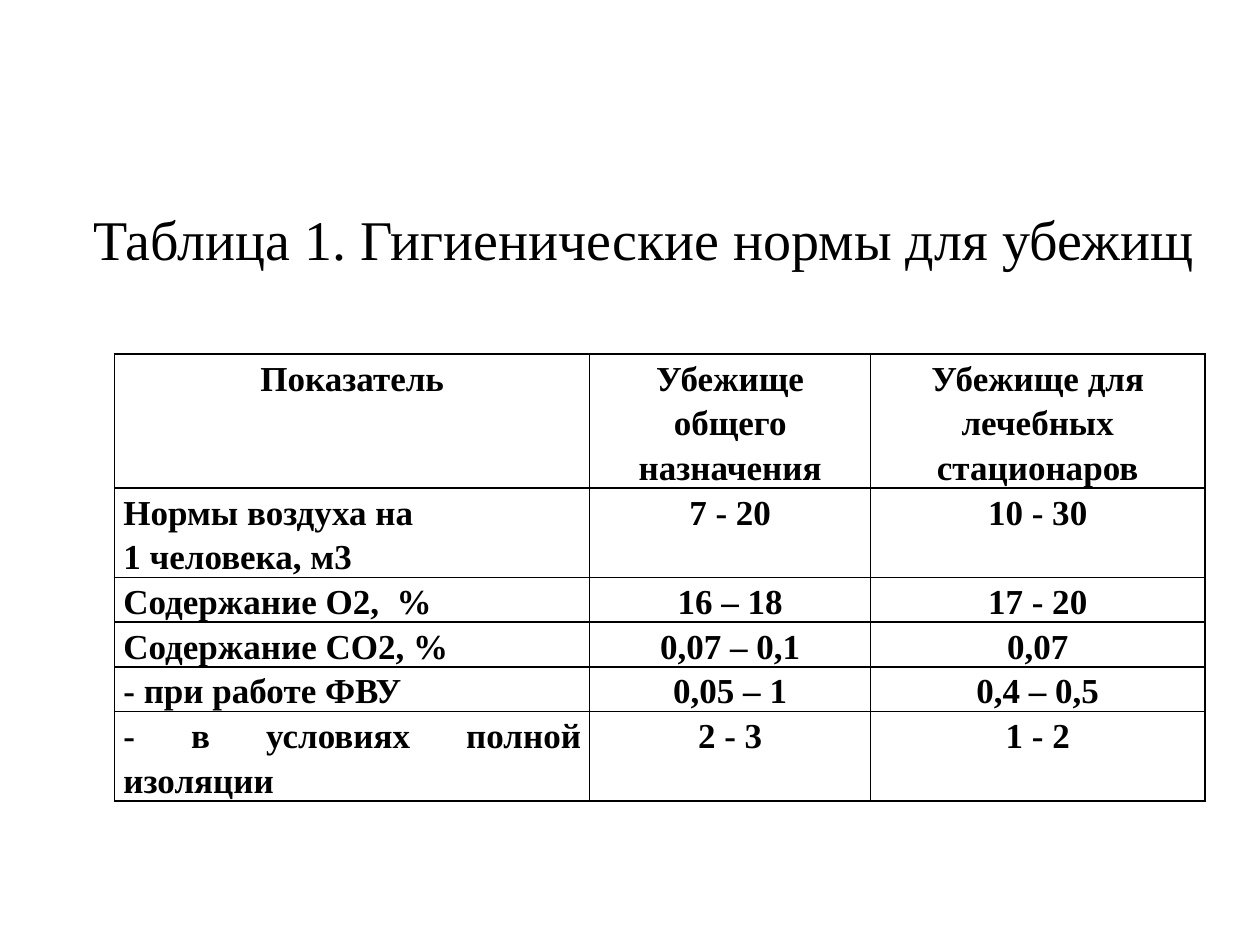
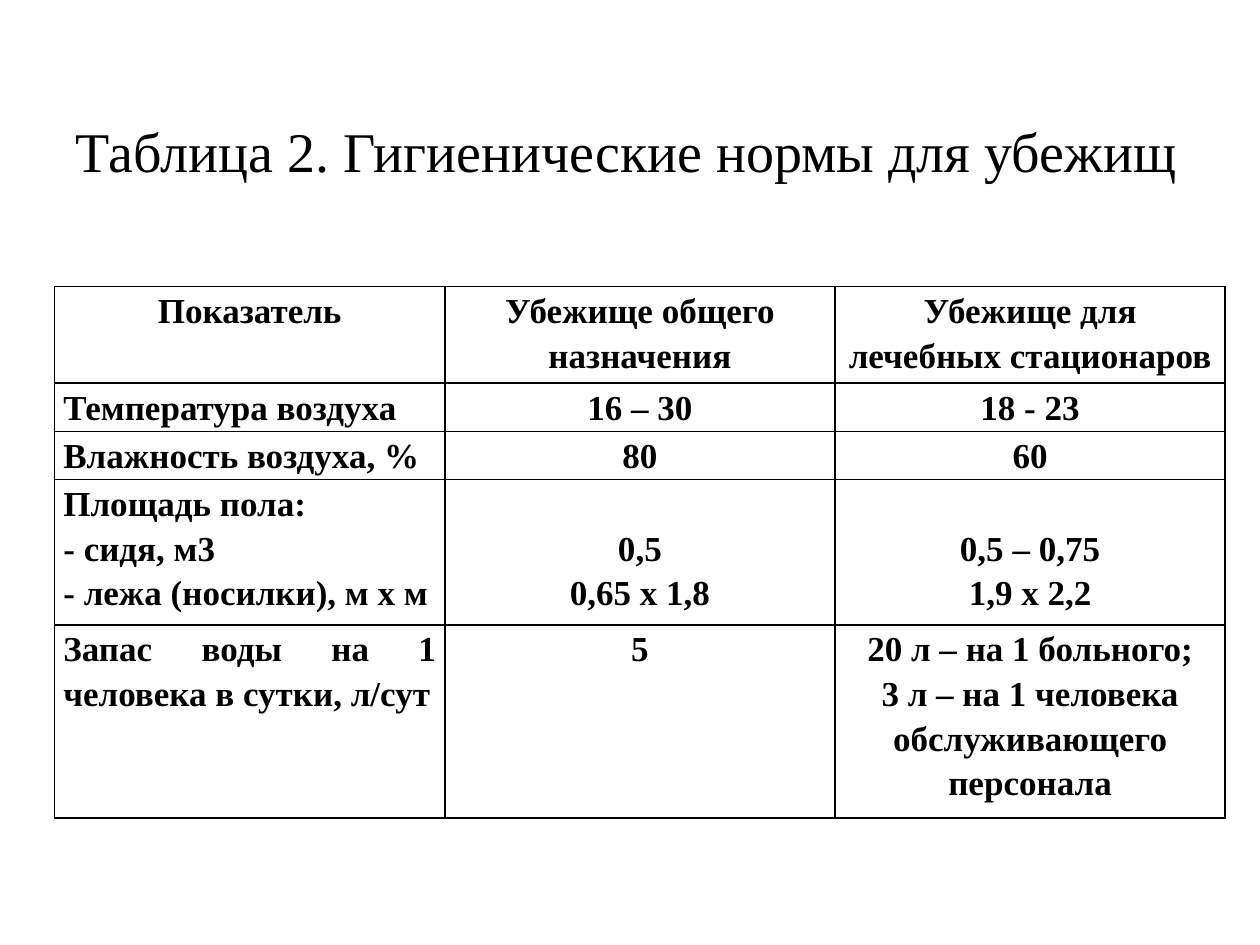
from lxml.etree import SubElement
from pptx import Presentation
from pptx.dml.color import RGBColor
from pptx.enum.text import MSO_ANCHOR, MSO_AUTO_SIZE, PP_ALIGN
from pptx.oxml.ns import qn
from pptx.util import Pt

BLACK = RGBColor(0, 0, 0)
WHITE = RGBColor(255, 255, 255)
TITLE_ONLY = 5
LINE = 25.5  # height of one table line, in points

TITLE_FONT = {"name": "Times New Roman", "size": Pt(32), "bold": False}
CELL_FONT = {"name": "Times New Roman", "size": Pt(20), "bold": True}
TITLE_FRAME = {"auto_size": MSO_AUTO_SIZE.NONE, "word_wrap": True,
               "vertical_anchor": MSO_ANCHOR.MIDDLE}
CELL_FORMAT = {"margin_left": Pt(5), "margin_right": Pt(5), "margin_top": 0,
               "margin_bottom": 0, "vertical_anchor": MSO_ANCHOR.TOP}
PLAIN_TABLE = {"first_row": False, "horz_banding": False}

HEADINGS = ("Показатель", "Убежище общего назначения",
            "Убежище для лечебных стационаров")
AIR_NORMS = (
    HEADINGS,
    ("Нормы воздуха на\n1 человека, м3", "7 - 20", "10 - 30"),
    ("Содержание О2,  %", "16 – 18", "17 - 20"),
    ("Содержание СО2, %", "0,07 – 0,1", "0,07"),
    ("- при работе ФВУ", "0,05 – 1", "0,4 – 0,5"),
    ("- в условиях полной изоляции", "2 - 3", "1 - 2"),
)
ROOM_NORMS = (
    HEADINGS,
    ("Температура воздуха", "16 – 30", "18 - 23"),
    ("Влажность воздуха, %", "80", "60"),
    ("Площадь пола:\n- сидя, м3\n- лежа (носилки), м х м",
     "0,5\n0,65 х 1,8", "0,5 – 0,75\n1,9 х 2,2"),
    ("Запас воды на 1 человека в сутки, л/сут", "5",
     "20 л – на 1 больного;\n3 л – на 1 человека обслуживающего персонала"),
)


def set_values(target, values):
    for name, value in values.items():
        setattr(target, name, value)


class NormsDeck:
    def __init__(self):
        self.deck = Presentation()
        self.deck.slide_width, self.deck.slide_height = Pt(720), Pt(540)
        self.page = None

    def add_page(self):
        layout = self.deck.slide_layouts[TITLE_ONLY]
        self.page = self.deck.slides.add_slide(layout)

    def fill_text(self, frame, text, font, align, spacing=1.0):
        frame.text = text
        for para in frame.paragraphs:
            para.alignment, para.line_spacing = align, spacing
            for span in para.runs:
                set_values(span.font, font)
                span.font.color.rgb = BLACK

    def title(self, text, left, top):
        box = self.page.shapes.title
        set_values(box, {"left": Pt(left), "top": Pt(top),
                         "width": Pt(706 - left), "height": Pt(46)})
        set_values(box.text_frame, TITLE_FRAME)
        self.fill_text(box.text_frame, text, TITLE_FONT, PP_ALIGN.LEFT)

    def border(self, cell):
        """Draw a thin black line on all four sides of the cell."""
        properties = cell._tc.get_or_add_tcPr()
        for place, side in enumerate(("lnL", "lnR", "lnT", "lnB")):
            line = SubElement(properties, qn(f"a:{side}"), w=str(Pt(1)))
            fill = SubElement(line, qn("a:solidFill"))
            SubElement(fill, qn("a:srgbClr"), val=str(BLACK))
            properties.insert(place, line)

    def table(self, rows, left, top, widths, heights):
        frame = self.page.shapes.add_table(
            len(rows), len(widths), Pt(left), Pt(top),
            Pt(sum(widths)), Pt(sum(heights)))
        table = frame.table
        set_values(table, PLAIN_TABLE)
        for column, width in zip(table.columns, widths):
            column.width = Pt(width)
        for row, height in zip(table.rows, heights):
            row.height = Pt(height)
        for r, texts in enumerate(rows):
            for c, text in enumerate(texts):
                cell = table.cell(r, c)
                is_label = r > 0 and c == 0
                align = PP_ALIGN.JUSTIFY if is_label else PP_ALIGN.CENTER
                self.fill_text(cell.text_frame, text, CELL_FONT, align, 1.15)
                set_values(cell, CELL_FORMAT)
                cell.fill.solid()
                cell.fill.fore_color.rgb = WHITE
                self.border(cell)
        return table


def main():
    norms = NormsDeck()

    norms.add_page()
    norms.title("Таблица 1. Гигиенические нормы для убежищ", 46, 113)
    norms.table(AIR_NORMS, 65.5, 202.3, (271.5, 160.5, 191),
                [LINE * lines for lines in (3, 2, 1, 1, 1, 2)])

    norms.add_page()
    norms.title("Таблица 2. Гигиенические нормы для убежищ", 36, 63)
    room_table = norms.table(ROOM_NORMS, 31.2, 163.7, [223] * 3,
                             (55.2, 27.6, 27.6, 83, 110.5))
    for column in (1, 2):  # floor areas start beside the second label line
        room_table.cell(3, column).margin_top = Pt(LINE)

    norms.deck.save("out.pptx")


if __name__ == "__main__":
    main()
